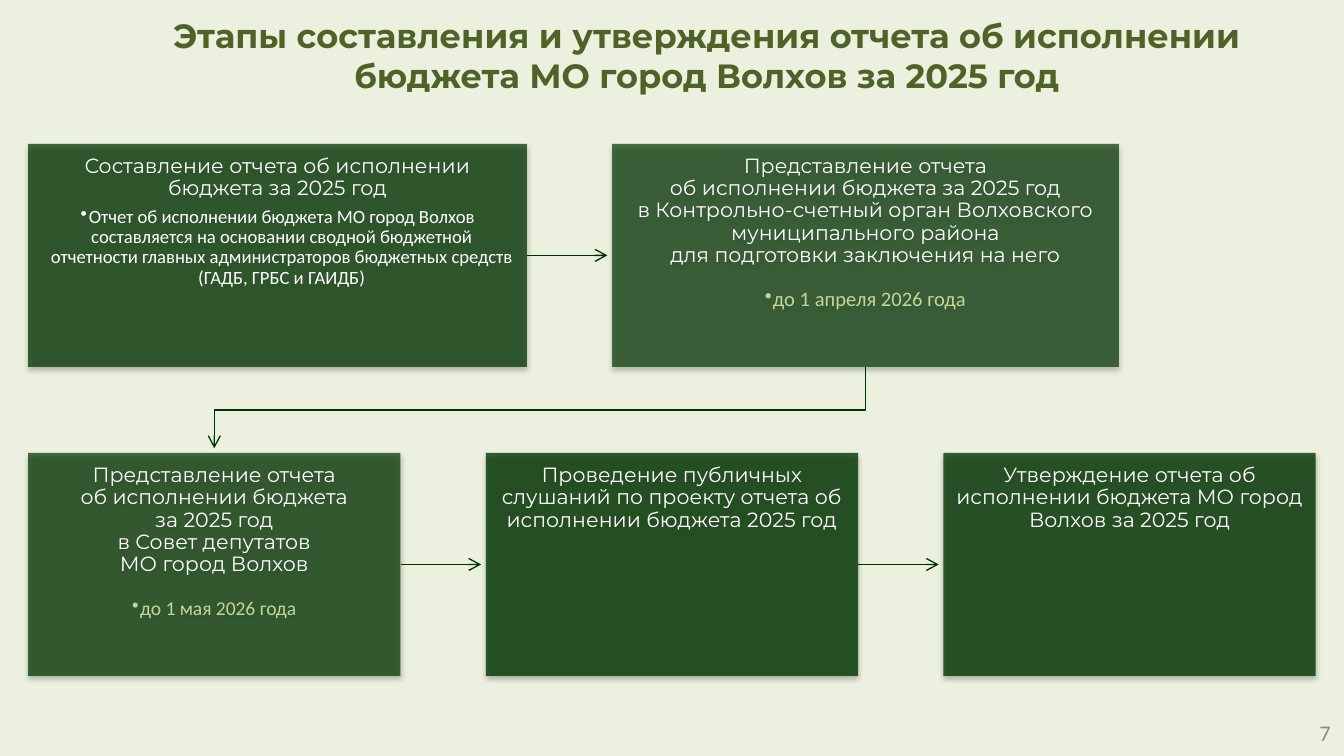
from dataclasses import dataclass

import pptx
import pptx.dml.color
import pptx.enum.shapes
import pptx.enum.text
import pptx.oxml
import pptx.oxml.ns
import pptx.util

EMU_PER_PX = 4572  # 200 px to the inch
ALIGN = pptx.enum.text.PP_ALIGN
ANCHOR = pptx.enum.text.MSO_ANCHOR


@dataclass(frozen=True)
class Theme:
    background: str = "EBF1DE"
    green: str = "003300"
    title: str = "4F6228"
    white: str = "FFFFFF"
    deadline: str = "C3D69B"
    number: str = "8C8C8C"
    heading_font: str = "Montserrat"
    body_font: str = "Calibri"
    title_size: float = 18
    heading_size: float = 11
    number_size: float = 12
    line_width: float = 0.75


@dataclass(frozen=True)
class Note:
    text: str
    size: float
    color: str
    space_before: float = 0


@dataclass(frozen=True)
class Stage:
    left: int
    top: int
    width: int
    opacity: int
    heading: tuple[str, ...]
    note: Note | None = None


THEME = Theme()

# Grid
SLIDE_WIDTH, SLIDE_HEIGHT = 2000, 1125
MARGIN, GAP, ARROW_GAP = 42, 127, 7
TOP_ROW, BOTTOM_ROW, STAGE_HEIGHT = 214, 674, 332
FIRST_WIDTH, SECOND_WIDTH, BOTTOM_WIDTH = 742, 754, 554
BOTTOM_LEFTS = [MARGIN + i * (BOTTOM_WIDTH + GAP) for i in range(3)]

DRAFTING = Stage(
    MARGIN, TOP_ROW, FIRST_WIDTH, 73,
    ("Составление отчета об исполнении бюджета за 2025 год",),
    Note("Отчет об исполнении бюджета МО город Волхов составляется на основании "
         "сводной бюджетной отчетности главных администраторов бюджетных средств "
         "(ГАДБ, ГРБС и ГАИДБ)", 10, THEME.white, 3.85))
AUDIT = Stage(
    MARGIN + FIRST_WIDTH + GAP, TOP_ROW, SECOND_WIDTH, 68,
    ("Представление отчета",
     "об исполнении бюджета за 2025 год",
     "в Контрольно-счетный орган Волховского муниципального района",
     "для подготовки заключения на него"),
    Note("до 1 апреля 2026 года", 11, THEME.deadline, 12))
COUNCIL = Stage(
    BOTTOM_LEFTS[0], BOTTOM_ROW, BOTTOM_WIDTH, 71,
    ("Представление отчета", "об исполнении бюджета", "за 2025 год",
     "в Совет депутатов", "МО город Волхов"),
    Note("до 1 мая 2026 года", 10.5, THEME.deadline, 12))
HEARINGS = Stage(
    BOTTOM_LEFTS[1], BOTTOM_ROW, BOTTOM_WIDTH, 78,
    ("Проведение публичных слушаний по проекту отчета об исполнении бюджета 2025 год",))
APPROVAL = Stage(
    BOTTOM_LEFTS[2], BOTTOM_ROW, BOTTOM_WIDTH, 77,
    ("Утверждение отчета об исполнении бюджета МО город Волхов за 2025 год",))
STAGES = (DRAFTING, AUDIT, COUNCIL, HEARINGS, APPROVAL)


def px(length: int) -> pptx.util.Emu:
    return pptx.util.Emu(length * EMU_PER_PX)


def rgb(color: str) -> pptx.dml.color.RGBColor:
    return pptx.dml.color.RGBColor.from_string(color)


def add_xml(parent, xml: str) -> None:
    namespace = pptx.oxml.ns.nsdecls("a")
    parent.append(pptx.oxml.parse_xml(xml.replace(" ", f" {namespace} ", 1)))


def set_font(paragraph, name: str, size: float, color: str, bold: bool = False) -> None:
    font = paragraph.font
    font.name, font.size, font.bold = name, pptx.util.Pt(size), bold
    font.color.rgb = rgb(color)


def add_paragraph(frame, text: str, alignment):
    first = frame.paragraphs[0]
    paragraph = frame.add_paragraph() if first.runs else first
    paragraph.add_run().text = text
    paragraph.alignment = alignment
    return paragraph


def add_note(frame, note: Note) -> None:
    paragraph = add_paragraph(frame, note.text, ALIGN.CENTER)
    paragraph.level = 1
    paragraph.line_spacing = 0.9
    paragraph.space_before = pptx.util.Pt(note.space_before)
    properties = paragraph._p.get_or_add_pPr()
    properties.set("marL", str(px(12)))
    properties.set("indent", str(-px(12)))
    add_xml(properties, '<a:buChar char="•"/>')
    set_font(paragraph, THEME.body_font, note.size, note.color)


def add_stage(slide, stage: Stage) -> None:
    shape = slide.shapes.add_shape(
        pptx.enum.shapes.MSO_SHAPE.RECTANGLE,
        px(stage.left), px(stage.top), px(stage.width), px(STAGE_HEIGHT))
    shape.line.fill.background()
    shape.fill.solid()
    shape.fill.fore_color.rgb = rgb(THEME.green)

    # Transparency and soft shadow
    properties = shape._element.spPr
    fill_color = properties.find(".//" + pptx.oxml.ns.qn("a:srgbClr"))
    add_xml(fill_color, f'<a:alpha val="{stage.opacity * 1000}"/>')
    shape.shadow.inherit = False
    add_xml(properties.find(pptx.oxml.ns.qn("a:effectLst")),
            '<a:outerShdw blurRad="39370" dist="22860" dir="5400000" rotWithShape="0">'
            '<a:srgbClr val="000000"><a:alpha val="35000"/></a:srgbClr></a:outerShdw>')

    frame = shape.text_frame
    frame.word_wrap = True
    frame.vertical_anchor = ANCHOR.TOP
    frame.margin_left = frame.margin_right = px(18)
    frame.margin_top = frame.margin_bottom = px(18)
    for line in stage.heading:
        paragraph = add_paragraph(frame, line, ALIGN.CENTER)
        paragraph.line_spacing = 0.9
        set_font(paragraph, THEME.heading_font, THEME.heading_size, THEME.white)
    if stage.note:
        add_note(frame, stage.note)


def style_arrow(line) -> None:
    line.color.rgb = rgb(THEME.green)
    line.width = pptx.util.Pt(THEME.line_width)
    add_xml(line._get_or_add_ln(), '<a:tailEnd type="arrow"/>')


def add_arrow_after(slide, stage: Stage) -> None:
    start, middle = stage.left + stage.width, stage.top + STAGE_HEIGHT // 2
    connector = slide.shapes.add_connector(
        pptx.enum.shapes.MSO_CONNECTOR.STRAIGHT,
        px(start), px(middle), px(start + GAP - ARROW_GAP), px(middle))
    style_arrow(connector.line)
    add_xml(connector._element.spPr, "<a:effectLst />")


def add_row_arrow(slide, source: Stage, target: Stage) -> None:
    start_x, end_x = (stage.left + stage.width // 2 for stage in (source, target))
    start_y, end_y = source.top + STAGE_HEIGHT, target.top - ARROW_GAP
    turn_y = (start_y + target.top) // 2
    builder = slide.shapes.build_freeform(start_x, start_y, scale=EMU_PER_PX)
    builder.add_line_segments(
        [(start_x, turn_y), (end_x, turn_y), (end_x, end_y)], close=False)
    shape = builder.convert_to_shape()
    shape.fill.background()
    shape.shadow.inherit = False
    style_arrow(shape.line)


def main() -> None:
    presentation = pptx.Presentation()
    presentation.slide_width, presentation.slide_height = px(SLIDE_WIDTH), px(SLIDE_HEIGHT)
    slide = presentation.slides.add_slide(presentation.slide_layouts[6])
    slide.background.fill.solid()
    slide.background.fill.fore_color.rgb = rgb(THEME.background)

    # Stages and the arrows between them
    for stage in (DRAFTING, COUNCIL, HEARINGS):
        add_arrow_after(slide, stage)
    add_row_arrow(slide, AUDIT, COUNCIL)
    for stage in STAGES:
        add_stage(slide, stage)

    # Title
    title = slide.shapes.add_textbox(px(196), px(12), px(1712), px(142)).text_frame
    title.word_wrap = False
    for line in ("Этапы составления и утверждения отчета об исполнении",
                 "бюджета МО город Волхов за 2025 год"):
        paragraph = add_paragraph(title, line, ALIGN.CENTER)
        set_font(paragraph, THEME.heading_font, THEME.title_size, THEME.title, bold=True)

    # Slide number
    number = slide.shapes.add_textbox(px(1534), px(1060), px(466), px(60)).text_frame
    number.word_wrap = True
    number.vertical_anchor = ANCHOR.MIDDLE
    paragraph = add_paragraph(number, "7", ALIGN.RIGHT)
    set_font(paragraph, THEME.body_font, THEME.number_size, THEME.number)

    presentation.save("out.pptx")


if __name__ == "__main__":
    main()
